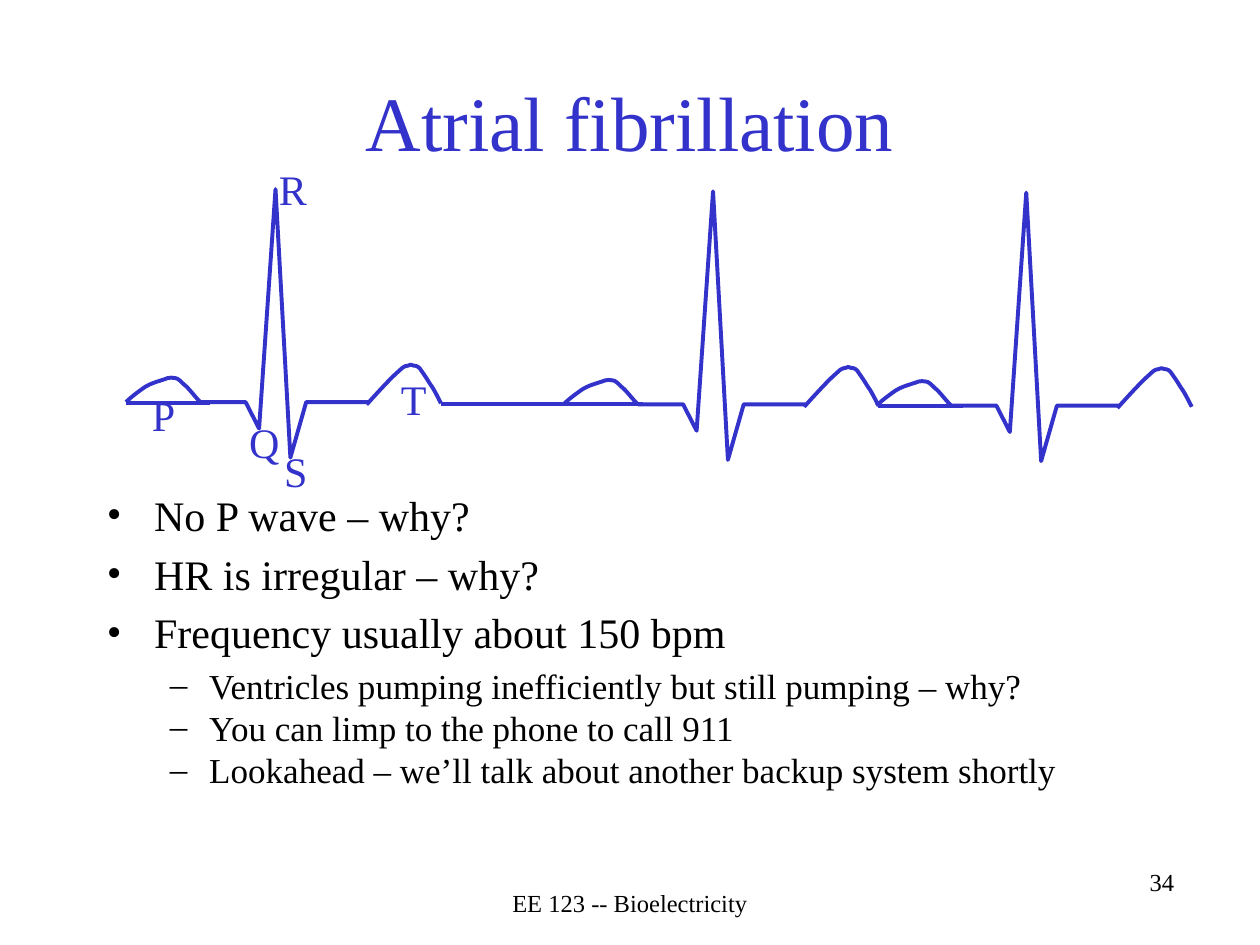
from lxml.etree import SubElement
from pptx import Presentation
from pptx.dml.color import RGBColor
from pptx.enum.text import MSO_ANCHOR, PP_ALIGN
from pptx.oxml.ns import qn
from pptx.util import Pt

BLUE = RGBColor(0x33, 0x33, 0xCC)
BLACK = RGBColor(0, 0, 0)

# Points of one heartbeat, measured from the start of its P wave.
# The P and T waves are chains of cubic Bézier curves.
P_WAVE = [(0, 0), (3.6, -3.6), (7.9, -6.5), (10.8, -8.6),
          (14.4, -10.8), (17.3, -11.5), (19.4, -12.2),
          (21.6, -13), (22.3, -13), (23.8, -13.7),
          (25.2, -13.7), (26.6, -14.4), (28.1, -13.7),
          (29.5, -13.7), (31, -12.2), (33.1, -10.1),
          (36, -7.9), (38.9, -3.6), (42.5, 0)]
T_WAVE = [(137.5, 1.4), (144.7, -6.5), (151.9, -14.4), (156.2, -18),
          (159.8, -21.6), (159.8, -20.2), (161.3, -20.9),
          (162.7, -21.6), (162.7, -21.6), (164.2, -20.9),
          (164.9, -20.9), (166.3, -20.9), (167.8, -19.4),
          (169.2, -17.3), (171.4, -14.4), (173.5, -10.8),
          (175.7, -7.9), (177.8, -3.6), (180, 0.7)]
QRS_COMPLEX = [(42.5, 0), (68.4, 0), (76.1, 15.1), (85.5, -121.7),
               (94, 31.7), (103, 0), (138.2, 0)]
BEAT_STARTS = [(72, 229.8), (322, 231.1), (501, 231.8)]
BASELINES = [(252, 324, 231), (72, 120.25, 230.4),
             (502, 550.5, 231.8), (319, 367.25, 231)]
WAVE_LABELS = [("P", 79.75, 219), ("Q", 135.25, 234.5), ("R", 152.25, 90),
               ("S", 155.25, 251.25), ("T", 222, 210)]

# Text, level, space before
POINTS = [
    ("No P wave – why?", 0, 4.8),
    ("HR is irregular – why?", 0, 4.8),
    ("Frequency usually about 150 bpm", 0, 4.8),
    ("Ventricles pumping inefficiently but still pumping – why?", 1, 4),
    ("You can limp to the phone to call 911", 1, 0),
    ("Lookahead – we’ll talk about another backup system shortly", 1, 0),
]
# Bullet, size, left margin, hanging indent
LEVELS = [("•", 24, 27, 27), ("–", 20, 58.5, 22.5)]


class SlideWriter:
    font_name = "Times New Roman"
    line_width = Pt(2.25)

    def __init__(self, slide):
        self.slide = slide

    def style_text(self, paragraph, size, color):
        paragraph.font.name = self.font_name
        paragraph.font.size = Pt(size)
        paragraph.font.color.rgb = color

    def style_line(self, line):
        line.color.rgb = BLUE
        line.width = self.line_width

    def frame(self, box):
        frame = self.slide.shapes.add_textbox(*map(Pt, box)).text_frame
        frame.word_wrap = True
        return frame

    def text(self, words, box, size, color=BLACK, align=PP_ALIGN.LEFT,
             anchor=MSO_ANCHOR.TOP):
        frame = self.frame(box)
        frame.vertical_anchor = anchor
        paragraph = frame.paragraphs[0]
        paragraph.text = words
        paragraph.alignment = align
        self.style_text(paragraph, size, color)

    def bullets(self, items, box):
        frame = self.frame(box)
        for i, (words, level, space) in enumerate(items):
            paragraph = frame.add_paragraph() if i else frame.paragraphs[0]
            bullet, size, margin, hanging = LEVELS[level]
            paragraph.text = words
            paragraph.level = level
            paragraph.space_before = Pt(space)
            self.style_text(paragraph, size, BLACK)
            properties = paragraph._p.get_or_add_pPr()
            properties.set("marL", str(Pt(margin)))
            properties.set("indent", str(-Pt(hanging)))
            for tag, key, value in (("a:buFont", "typeface", self.font_name),
                                    ("a:buChar", "char", bullet)):
                mark = SubElement(properties, qn(tag))
                mark.set(key, value)
                properties.insert_element_before(mark, "a:tabLst", "a:defRPr", "a:extLst")

    def trace(self, points, origin, curved):
        """Draw an open outline whose points are offsets from origin."""
        left, top = origin
        placed = [(Pt(left + x), Pt(top + y)) for x, y in points]
        builder = self.slide.shapes.build_freeform(*placed[0])
        builder.add_line_segments(placed[1:], close=False)
        wave = builder.convert_to_shape()
        wave.shadow.inherit = False
        wave.fill.background()
        self.style_line(wave.line)
        if curved:
            self.bend(wave)

    def bend(self, wave):
        """Turn each three straight segments into one cubic curve."""
        outline = next(wave._element.iter(qn("a:path")))
        segments = outline.findall(qn("a:lnTo"))
        for i in range(0, len(segments), 3):
            curve = SubElement(outline, qn("a:cubicBezTo"))
            for segment in segments[i:i + 3]:
                curve.append(segment[0])
                outline.remove(segment)

    def baseline(self, start, end, height):
        line = self.slide.shapes.add_connector(
            1, Pt(start), Pt(height), Pt(end), Pt(height))
        SubElement(line._element.spPr, qn("a:effectLst"))
        self.style_line(line.line)


def main():
    presentation = Presentation()
    presentation.slide_width, presentation.slide_height = Pt(720), Pt(540)
    writer = SlideWriter(presentation.slides.add_slide(presentation.slide_layouts[6]))

    writer.text("34", (450, 492, 228, 36), 14, align=PP_ALIGN.RIGHT)
    writer.text("Atrial fibrillation", (54, 24, 612, 90), 44, BLUE,
                PP_ALIGN.CENTER, MSO_ANCHOR.MIDDLE)
    writer.bullets(POINTS, (54, 276, 612, 214.5))
    writer.text("EE 123 -- Bioelectricity", (246, 504, 228, 24), 14,
                align=PP_ALIGN.CENTER)

    for start in BEAT_STARTS:
        writer.trace(P_WAVE, start, curved=True)
        writer.trace(T_WAVE, start, curved=True)
        writer.trace(QRS_COMPLEX, start, curved=False)
    for start, end, height in BASELINES:
        writer.baseline(start, end, height)
    for letter, left, top in WAVE_LABELS:
        writer.text(letter, (left, top, 24, 36), 24, BLUE)

    presentation.save("out.pptx")


if __name__ == "__main__":
    main()
